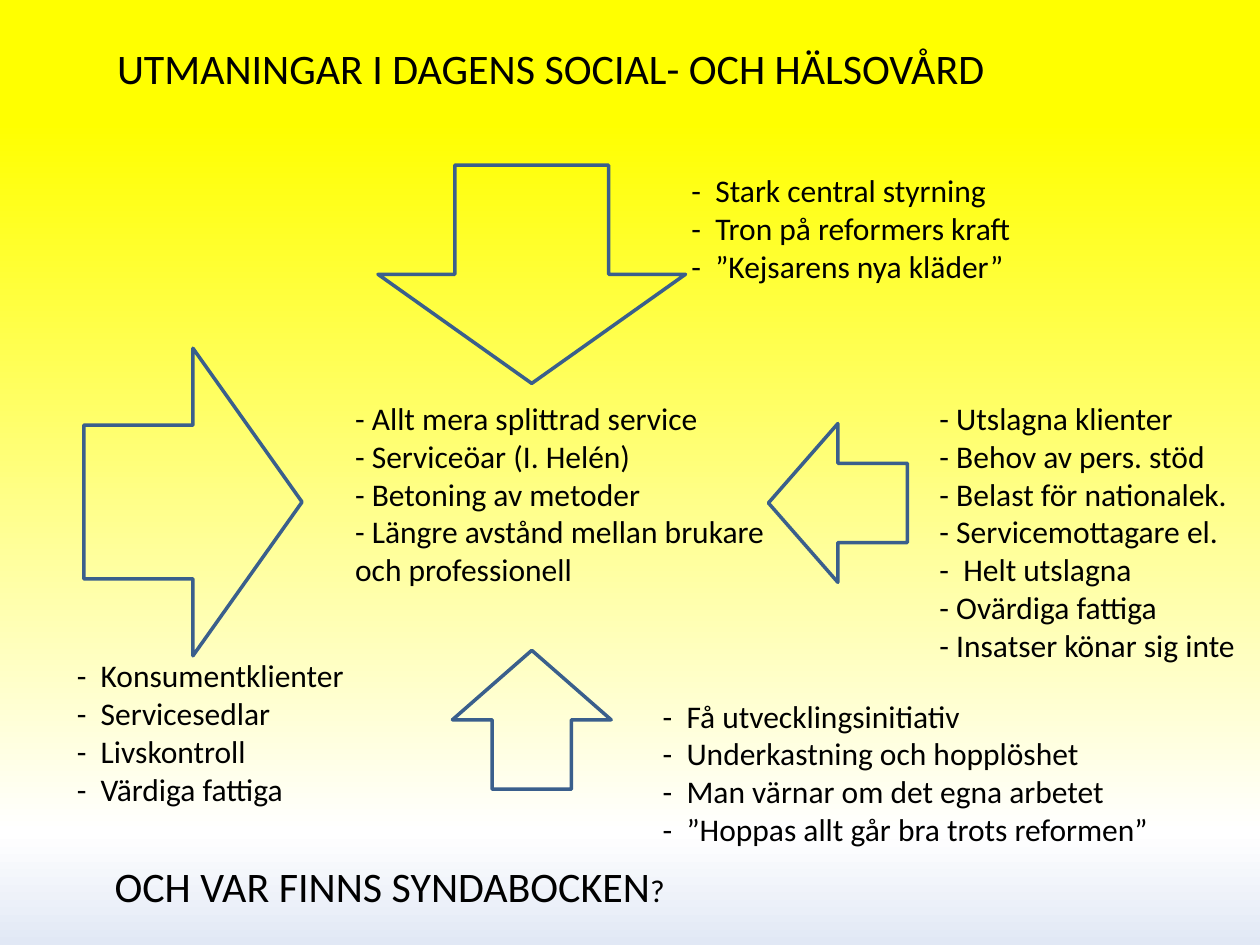
from copy import deepcopy

from pptx import Presentation
from pptx.dml.color import RGBColor
from pptx.enum.shapes import MSO_SHAPE
from pptx.enum.text import MSO_AUTO_SIZE
from pptx.oxml.ns import qn
from pptx.util import Cm, Pt

DOWN_ARROW = MSO_SHAPE.DOWN_ARROW
GROW = MSO_AUTO_SIZE.SHAPE_TO_FIT_TEXT

FONT = "Calibri"
COLORS = {
    "text": "000000",
    "arrow": "3A5F8C",
    "bg_top": "FFFF00",
    "bg_middle": "FFFFFF",
    "bg_bottom": "E1E8F5",
}
BACKGROUND = [(0.13, "bg_top"), (0.88, "bg_middle"), (1, "bg_bottom")]

LARGE_ARROW = (6.2, 4.4)
SMALL_ARROW = (3.2, 2.8)
# left, top, size, rotation
ARROWS = [
    (7.62, 3.33, LARGE_ARROW, 0),
    (9.12, 13.11, SMALL_ARROW, 180),
    (0.79, 7.92, LARGE_ARROW, 270),
    (15.29, 8.74, SMALL_ARROW, 90),
]

# left, top, width, height, lines
LISTS = [
    (13.69, 3.33, 8.99, 2.57, [
        "-  Stark central styrning",
        "-  Tron på reformers kraft",
        "-  ”Kejsarens nya kläder”",
    ]),
    (13.11, 13.92, 10.39, 3.33, [
        "-  Få utvecklingsinitiativ",
        "-  Underkastning och hopplöshet",
        "-  Man värnar om det egna arbetet",
        "-  ”Hoppas allt går bra trots reformen”",
    ]),
    (6.91, 7.92, 9.8, 4.11, [
        "- Allt mera splittrad service",
        "- Serviceöar (I. Helén)",
        "- Betoning av metoder",
        "- Längre avstånd mellan brukare och professionell",
    ]),
    (1.3, 13.11, 7.82, 3.33, [
        "-  Konsumentklienter",
        "-  Servicesedlar",
        "-  Livskontroll",
        "-  Värdiga fattiga",
    ]),
    (18.69, 7.92, 6.71, 5.64, [
        "- Utslagna klienter",
        "- Behov av pers. stöd",
        "- Belast för nationalek.",
        "- Servicemottagare el.",
        "-  Helt utslagna",
        "- Ovärdiga fattiga",
        "- Insatser könar sig inte",
    ]),
]


def rgb(name):
    return RGBColor.from_string(COLORS[name])


def set_background(slide):
    fill = slide.background.fill
    fill.gradient()
    fill.gradient_angle = 270  # counter-clockwise, so top to bottom
    gs_list = slide.element.find(".//" + qn("a:gsLst"))
    gs_list.append(deepcopy(gs_list[-1]))
    for stop, (position, color) in zip(fill.gradient_stops, BACKGROUND):
        stop.position = position
        stop.color.rgb = rgb(color)


def add_arrow(slide, left, top, size, rotation):
    width, height = size
    sp = slide.shapes.add_shape(DOWN_ARROW, Cm(left), Cm(top), Cm(width), Cm(height))
    sp.rotation = rotation
    sp.shadow.inherit = False
    sp.fill.background()
    sp.line.color.rgb = rgb("arrow")
    sp.line.width = Pt(2)


def format_runs(runs, size, color="text"):
    for r in runs:
        r.font.name = FONT
        r.font.size = Pt(size)
        r.font.color.rgb = rgb(color)


def add_text(slide, text, left, top, width, height, size=18):
    """Add a text box and return its paragraph; newlines become line breaks."""
    sp = slide.shapes.add_textbox(Cm(left), Cm(top), Cm(width), Cm(height))
    tf = sp.text_frame
    tf.word_wrap = True
    tf.auto_size = GROW
    p = tf.paragraphs[0]
    p.text = text.replace("\n", "\v")
    format_runs(p.runs, size)
    return p


def main():
    prs = Presentation()
    prs.slide_width, prs.slide_height = Cm(25.4), Cm(19.05)
    slide = prs.slides.add_slide(prs.slide_layouts[6])
    set_background(slide)

    add_text(slide, "UTMANINGAR I DAGENS SOCIAL- OCH HÄLSOVÅRD",
             2.11, 0.74, 21.41, 1.27, size=24)
    for arrow in ARROWS:
        add_arrow(slide, *arrow)
    for left, top, width, height, lines in LISTS:
        add_text(slide, "\n".join(lines), left, top, width, height)

    p = add_text(slide, "OCH VAR FINNS SYNDABOCKEN", 2.06, 17.22, 21.41, 1.27, size=24)
    r = p.add_run()
    r.text = "?"
    format_runs([r], size=18)

    prs.save("out.pptx")


if __name__ == "__main__":
    main()
